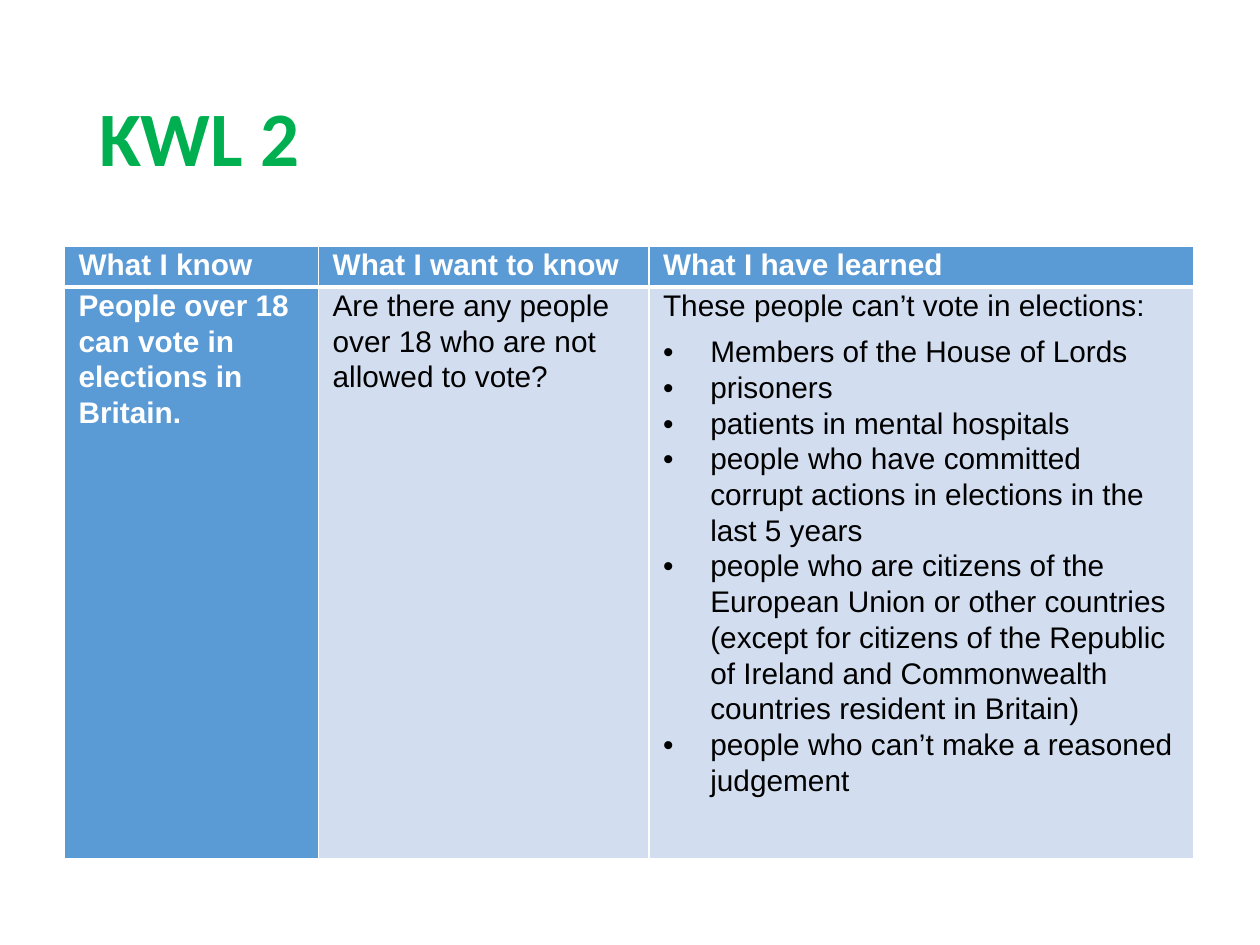
from lxml.etree import SubElement
from pptx import Presentation
from pptx.dml.color import RGBColor as RGB
from pptx.enum.text import MSO_ANCHOR as Anchor
from pptx.oxml.ns import qn
from pptx.util import Pt

# Content
TITLE = "KWL 2"
HEADERS = ["What I know", "What I want to know", "What I have learned"]
KNOWN = "People over 18 can vote in elections in Britain."
QUESTION = "Are there any people over 18 who are not allowed to vote?"
LEARNED = "These people can’t vote in elections:"
NON_VOTERS = [
    "Members of the House of Lords",
    "prisoners",
    "patients in mental hospitals",
    "people who have committed corrupt actions in elections in the last 5 years",
    "people who are citizens of the European Union or other countries "
    "(except for citizens of the Republic of Ireland and Commonwealth "
    "countries resident in Britain)",
    "people who can’t make a reasoned judgement",
]

# Each cell: (plain paragraphs, bulleted paragraphs)
ROWS = [
    [([header], []) for header in HEADERS],
    [([KNOWN], []), ([QUESTION], []), ([LEARNED], NON_VOTERS)],
]

THEME = {
    "title_font": "Calibri", "title_size": 44, "title": "00B050",
    "body_font": "Arial", "body_size": 17, "body": "000000",
    "strong_fill": "5B9BD5", "strong": "FFFFFF",
    "soft_fill": "D2DEEF", "border": "FFFFFF",
}

# Layout in points
SLIDE_SIZE = (720, 540)
TITLE_BOX = (49.7, 28.8, 620.6, 104.4)
TABLE_ORIGIN = (36.9, 140.6)
COLUMN_WIDTHS = [145.2, 188.8, 311]
ROW_HEIGHTS = [23.4, 326.8]
CELL_MARGIN = 8
BULLET_INDENT = 27
PARAGRAPH_GAP = 6
LINE_SPACING = 1.07
THIN, THICK = 1, 3


def add_text(paragraph, text, font, size, color, bold):
    run = paragraph.add_run()
    run.text = text
    run.font.name = font
    run.font.size = Pt(size)
    run.font.bold = bold
    run.font.color.rgb = RGB.from_string(color)


def add_bullet(paragraph):
    properties = paragraph._p.get_or_add_pPr()
    properties.set("marL", str(Pt(BULLET_INDENT)))
    properties.set("indent", str(-Pt(BULLET_INDENT)))
    SubElement(properties, qn("a:buFont"), typeface=THEME["body_font"])
    SubElement(properties, qn("a:buChar"), char="•")


def add_borders(cell, is_header):
    widths = {"L": THIN, "R": THIN,
              "T": THIN if is_header else THICK,
              "B": THICK if is_header else THIN}
    properties = cell._tc.get_or_add_tcPr()
    for side, width in widths.items():
        line = SubElement(properties, qn(f"a:ln{side}"), w=str(Pt(width)))
        fill = SubElement(line, qn("a:solidFill"))
        SubElement(fill, qn("a:srgbClr"), val=THEME["border"])


def fill_cell(cell, plain, bullets, strong, is_header):
    cell.margin_left = cell.margin_right = Pt(CELL_MARGIN)
    cell.margin_top = cell.margin_bottom = 0
    add_borders(cell, is_header)
    cell.fill.solid()
    cell.fill.fore_color.rgb = RGB.from_string(
        THEME["strong_fill" if strong else "soft_fill"])

    frame = cell.text_frame
    texts = plain + bullets
    for index, text in enumerate(texts):
        paragraph = frame.add_paragraph() if index else frame.paragraphs[0]
        is_bullet = index >= len(plain)
        is_last = index == len(texts) - 1
        paragraph.line_spacing = LINE_SPACING
        paragraph.space_after = Pt(0 if is_bullet and not is_last else PARAGRAPH_GAP)
        if is_bullet:
            add_bullet(paragraph)
        add_text(paragraph, text, THEME["body_font"], THEME["body_size"],
                 THEME["strong" if strong else "body"], strong)


def add_title(slide):
    frame = slide.shapes.add_textbox(*map(Pt, TITLE_BOX)).text_frame
    frame.word_wrap = True
    frame.vertical_anchor = Anchor.MIDDLE
    paragraph = frame.paragraphs[0]
    paragraph.line_spacing = 0.9
    add_text(paragraph, TITLE, THEME["title_font"], THEME["title_size"],
             THEME["title"], True)


def add_kwl_table(slide):
    shape = slide.shapes.add_table(
        len(ROWS), len(HEADERS), *map(Pt, TABLE_ORIGIN),
        Pt(sum(COLUMN_WIDTHS)), Pt(sum(ROW_HEIGHTS)))
    table = shape.table
    table.first_col = True
    for column, width in zip(table.columns, COLUMN_WIDTHS):
        column.width = Pt(width)
    for row, height in zip(table.rows, ROW_HEIGHTS):
        row.height = Pt(height)

    # Header row and first column share the strong style
    for r, row in enumerate(ROWS):
        for c, (plain, bullets) in enumerate(row):
            fill_cell(table.cell(r, c), plain, bullets,
                      strong=r == 0 or c == 0, is_header=r == 0)


def main():
    presentation = Presentation()
    presentation.slide_width, presentation.slide_height = map(Pt, SLIDE_SIZE)
    slide = presentation.slides.add_slide(presentation.slide_layouts[6])
    add_kwl_table(slide)
    add_title(slide)
    presentation.save("out.pptx")


if __name__ == "__main__":
    main()
